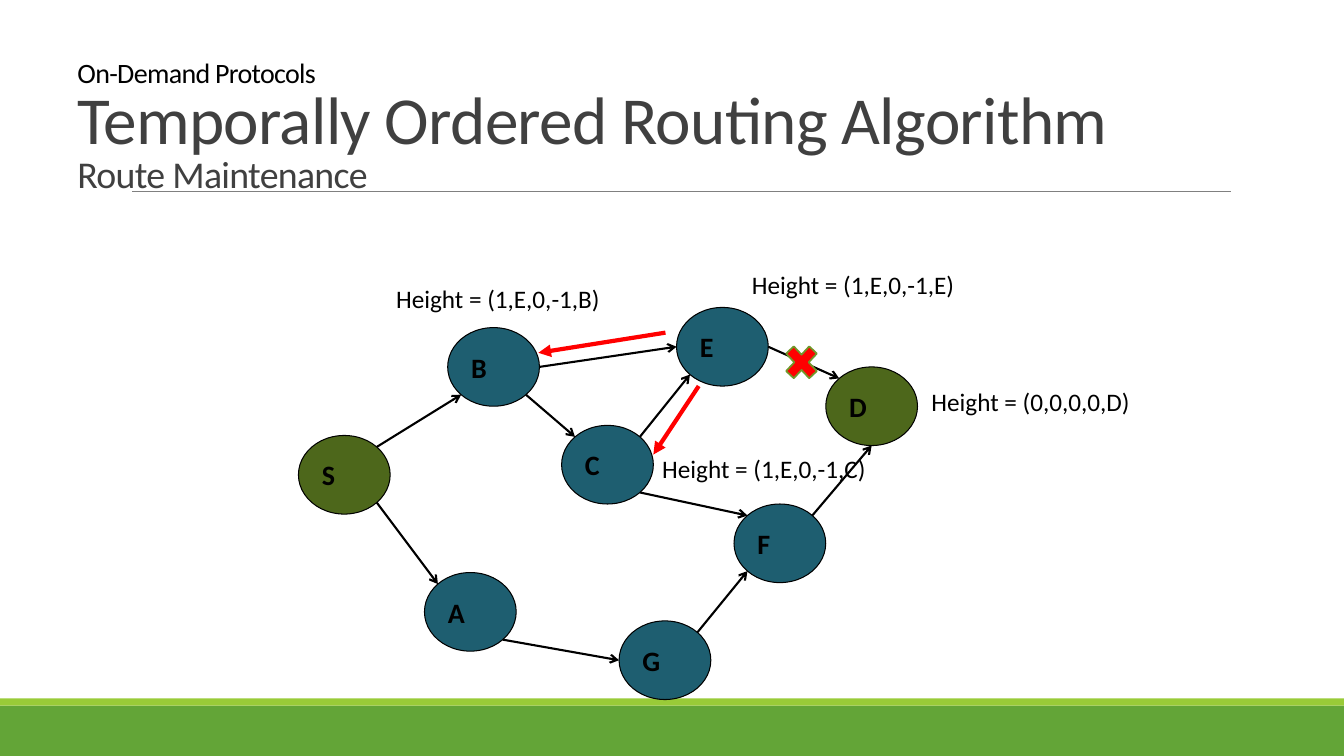
"""Build a slide on route maintenance in the Temporally Ordered Routing Algorithm."""
from math import sqrt
from typing import NamedTuple

from lxml import etree
from pptx import Presentation
from pptx.dml.color import RGBColor
from pptx.enum.shapes import MSO_CONNECTOR, MSO_SHAPE
from pptx.enum.text import MSO_ANCHOR, PP_ALIGN
from pptx.oxml.ns import qn
from pptx.shapes.autoshape import Shape
from pptx.slide import Slide
from pptx.text.text import _Paragraph, _Run
from pptx.util import Inches, Pt

RECTANGLE = MSO_SHAPE.RECTANGLE
OVAL = MSO_SHAPE.OVAL
CROSS = MSO_SHAPE.MATH_MULTIPLY
STRAIGHT = MSO_CONNECTOR.STRAIGHT
MIDDLE = MSO_ANCHOR.MIDDLE
BOTTOM = MSO_ANCHOR.BOTTOM
LEFT = PP_ALIGN.LEFT

FONT = "Calibri"
BLACK, RED, GRAY = "000000", "FF0000", "404040"
TEAL, OLIVE = "1E5E70", "4D671B"
NODE_WIDTH, NODE_HEIGHT = 0.91, 0.78
DIAGONAL = sqrt(0.5)
SITES = {
    "left": (-1, 0),
    "right": (1, 0),
    "bottom": (0, 1),
    "top left": (-DIAGONAL, -DIAGONAL),
    "top right": (DIAGONAL, -DIAGONAL),
    "bottom left": (-DIAGONAL, DIAGONAL),
    "bottom right": (DIAGONAL, DIAGONAL),
}


class Box(NamedTuple):
    left: float
    top: float
    width: float
    height: float


class Point(NamedTuple):
    x: float
    y: float


class Node(NamedTuple):
    left: float
    top: float
    fill: str


class Link(NamedTuple):
    source: str
    source_site: str
    target: str
    target_site: str


class Label(NamedTuple):
    text: str
    box: Box


class TitleLine(NamedTuple):
    text: str
    size: float
    color: str


NODES = {
    "S": Node(2.96, 4.32, OLIVE),
    "B": Node(4.44, 3.25, TEAL),
    "E": Node(6.71, 3.05, TEAL),
    "D": Node(8.19, 3.64, OLIVE),
    "A": Node(4.21, 5.68, TEAL),
    "C": Node(5.57, 4.22, TEAL),
    "F": Node(7.28, 5, TEAL),
    "G": Node(6.14, 6.16, TEAL),
}
LINKS = [
    Link("B", "bottom right", "C", "top left"),
    Link("S", "top right", "B", "bottom left"),
    Link("B", "right", "E", "left"),
    Link("C", "top right", "E", "bottom left"),
    Link("E", "right", "D", "top left"),
    Link("F", "top right", "D", "bottom"),
    Link("A", "bottom right", "G", "left"),
    Link("G", "top right", "F", "bottom left"),
    Link("S", "bottom right", "A", "top left"),
    Link("C", "bottom right", "F", "top left"),
]
REVERSALS = [
    (Point(6.6, 3.3), Point(5.34, 3.5)),
    (Point(6.93, 3.83), Point(6.48, 4.51)),
]
HEIGHTS = [
    Label("Height = (0,0,0,0,D)", Box(9.14, 3.78, 2.25, 0.4)),
    Label("Height = (1,E,0,-1,E)", Box(7.36, 2.62, 2.29, 0.4)),
    Label("Height = (1,E,0,-1,C)", Box(6.47, 4.45, 2.3, 0.4)),
    Label("Height = (1,E,0,-1,B)", Box(3.83, 2.76, 2.31, 0.4)),
]
TITLE = [
    TitleLine("On-Demand Protocols", 20, BLACK),
    TitleLine("Temporally Ordered Routing Algorithm", 48, GRAY),
    TitleLine("Route Maintenance", 27, GRAY),
]


def rgb(color: str) -> RGBColor:
    """Turn a hex string into a colour."""
    return RGBColor.from_string(color)


def add_run(paragraph: _Paragraph, text: str, size: float, color: str, bold: bool = False) -> _Run:
    """Append a formatted run."""
    run = paragraph.add_run()
    run.text = text
    run.font.name = FONT
    run.font.size = Pt(size)
    run.font.bold = bold
    run.font.color.rgb = rgb(color)
    return run


def add_shape(slide: Slide, kind: MSO_SHAPE, box: Box, fill: str,
              line: str = "", line_width: float = 0) -> Shape:
    """Add a filled shape, outlined only when a line colour is given."""
    shape = slide.shapes.add_shape(kind, *map(Inches, box))
    shape.shadow.inherit = False
    shape.fill.solid()
    shape.fill.fore_color.rgb = rgb(fill)
    if line:
        shape.line.color.rgb = rgb(line)
        shape.line.width = Pt(line_width)
    else:
        shape.line.fill.background()
    return shape


def add_line(slide: Slide, start: Point, end: Point, color: str, width: float, arrowhead: str = "") -> None:
    """Add a straight line with an optional arrowhead at its end."""
    connector = slide.shapes.add_connector(STRAIGHT, *map(Inches, (*start, *end)))
    connector.line.color.rgb = rgb(color)
    connector.line.width = Pt(width)
    if arrowhead:
        etree.SubElement(connector.line._get_or_add_ln(), qn("a:tailEnd"), type=arrowhead)
    etree.SubElement(connector._element.spPr, qn("a:effectLst"))


def add_node(slide: Slide, name: str, node: Node) -> None:
    """Add a lettered network node."""
    box = Box(node.left, node.top, NODE_WIDTH, NODE_HEIGHT)
    shape = add_shape(slide, OVAL, box, node.fill, BLACK, 0.75)
    shape.text_frame.vertical_anchor = MIDDLE
    paragraph = shape.text_frame.paragraphs[0]
    paragraph.alignment = LEFT
    add_run(paragraph, name, 20, BLACK, bold=True)


def site_point(name: str, site: str) -> Point:
    """Find a connection site on the rim of a node."""
    node = NODES[name]
    across, down = SITES[site]
    return Point(node.left + NODE_WIDTH * (1 + across) / 2, node.top + NODE_HEIGHT * (1 + down) / 2)


def add_title(slide: Slide) -> None:
    """Add the three-line title."""
    frame = slide.shapes.add_textbox(*map(Inches, Box(0.67, 0.5, 12, 1.5))).text_frame
    frame.word_wrap = True
    frame.vertical_anchor = BOTTOM
    paragraph = frame.paragraphs[0]
    paragraph.line_spacing = 0.85
    for index, line in enumerate(TITLE):
        if index:
            paragraph.add_line_break()
        run = add_run(paragraph, line.text, line.size, line.color)
        run.font._element.set("spc", "-50")


def add_label(slide: Slide, label: Label) -> None:
    """Add a height label."""
    frame = slide.shapes.add_textbox(*map(Inches, label.box)).text_frame
    frame.word_wrap = False
    add_run(frame.paragraphs[0], label.text, 18, BLACK)


def main() -> None:
    """Draw the slide and save it."""
    presentation = Presentation()
    presentation.slide_width, presentation.slide_height = Inches(13.33), Inches(7.5)
    slide = presentation.slides.add_slide(presentation.slide_layouts[6])
    add_shape(slide, RECTANGLE, Box(0, 7, 13.33, 0.5), "63A537")
    add_shape(slide, RECTANGLE, Box(0, 6.93, 13.33, 0.07), "99CB38")
    add_line(slide, Point(1.31, 1.9), Point(12.21, 1.9), "808080", 0.5)
    for name, node in NODES.items():
        add_node(slide, name, node)
    for link in LINKS:
        start = site_point(link.source, link.source_site)
        end = site_point(link.target, link.target_site)
        add_line(slide, start, end, BLACK, 1.5, "arrow")
    for start, end in REVERSALS:
        add_line(slide, start, end, RED, 3, "triangle")
    add_title(slide)
    add_shape(slide, CROSS, Box(7.73, 3.36, 0.44, 0.47), RED, "719629", 1.25)
    for label in HEIGHTS:
        add_label(slide, label)
    presentation.save("out.pptx")


if __name__ == "__main__":
    main()
